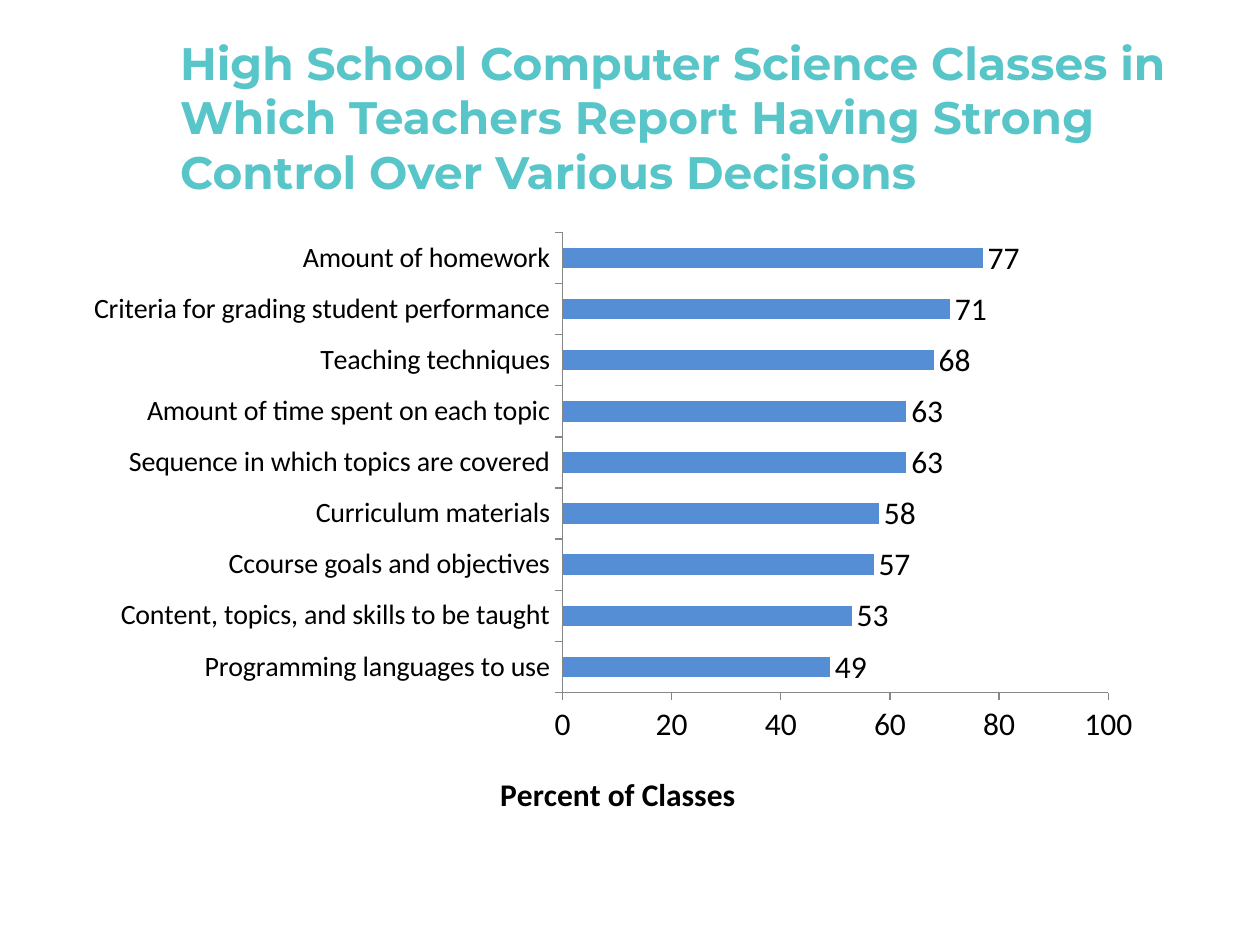
from lxml import etree
from pptx import Presentation
from pptx.chart.data import CategoryChartData
from pptx.dml.color import RGBColor
from pptx.enum.chart import XL_CHART_TYPE as Kind, XL_LABEL_POSITION as Spot
from pptx.enum.chart import XL_TICK_MARK as Tick
from pptx.enum.text import MSO_ANCHOR as Anchor
from pptx.oxml.ns import qn
from pptx.util import Cm, Pt

TEAL = RGBColor(0x58, 0xC5, 0xC9)
BLUE = RGBColor(0x55, 0x8E, 0xD5)
GREY = RGBColor(0x86, 0x86, 0x86)
BLACK = RGBColor(0, 0, 0)

ROWS = [
    ("Programming languages to use", 49),
    ("Content, topics, and skills to be taught", 53),
    ("Ccourse goals and objectives", 57),
    ("Curriculum materials", 58),
    ("Sequence in which topics are covered", 63),
    ("Amount of time spent on each topic", 63),
    ("Teaching techniques", 68),
    ("Criteria for grading student performance", 71),
    ("Amount of homework", 77),
]


def write(frame, text, size, color=BLACK, face="Calibri", bold=False):
    run = frame.paragraphs[0].add_run()
    run.text = text
    font = run.font
    font.size, font.name, font.bold = Pt(size), face, bold
    font.color.rgb = color


def place(parent, index, **parts):
    """Set a manual layout, in fractions of the chart, as the child at index."""
    for old in parent.findall(qn("c:layout")):
        parent.remove(old)
    layout = etree.Element(qn("c:layout"))
    manual = etree.SubElement(layout, qn("c:manualLayout"))
    for name, value in parts.items():
        etree.SubElement(manual, qn("c:" + name)).set("val", str(value))
    parent.insert(index, layout)


deck = Presentation()
deck.slide_width, deck.slide_height = Cm(25.4), Cm(19.05)
slide = deck.slides.add_slide(deck.slide_layouts[6])

# Bar chart
data = CategoryChartData()
data.categories = [name for name, _ in ROWS]
data.add_series("Series 1", [value for _, value in ROWS])
chart = slide.shapes.add_chart(
    Kind.BAR_CLUSTERED, Cm(1.47), Cm(4.45), Cm(21.79), Cm(12.37), data).chart
chart.has_legend = chart.has_title = False
chart.font.name, chart.font.size = "Calibri", Pt(18)
chart.font.color.rgb = BLACK

plot = chart.plots[0]
plot.gap_width = 150
plot.vary_by_categories = False
bars = plot.series[0]
bars.format.fill.solid()
bars.format.fill.fore_color.rgb = BLUE
plot.has_data_labels = True
plot.data_labels.show_value = True
plot.data_labels.position = Spot.OUTSIDE_END

cats, vals = chart.category_axis, chart.value_axis
for axis in (cats, vals):
    axis.has_major_gridlines = False
    axis.major_tick_mark = Tick.OUTSIDE
    axis.minor_tick_mark = Tick.NONE
    axis.format.line.color.rgb = GREY
    axis.format.line.width = Pt(0.75)
cats.tick_labels.font.size = Pt(16)
vals.minimum_scale, vals.maximum_scale, vals.major_unit = 0, 100, 20

title = vals.axis_title
write(title.text_frame, "Percent of Classes", 18, bold=True)
place(title._element, 1, xMode="edge", yMode="edge", x=0.39, y=0.89)
area = chart._chartSpace.chart.plotArea
place(area, 0, layoutTarget="inner", xMode="edge", yMode="edge",
      x=0.453, y=0.019, w=0.505, h=0.75)

# Heading
box = slide.shapes.add_textbox(Cm(3.38), Cm(0.76), Cm(20.75), Cm(3.18))
head = box.text_frame
head.word_wrap = True
head.vertical_anchor = Anchor.MIDDLE
write(head, "High School Computer Science Classes in Which Teachers Report "
      "Having Strong Control Over Various Decisions", 26, TEAL, "Montserrat", True)

deck.save("out.pptx")
